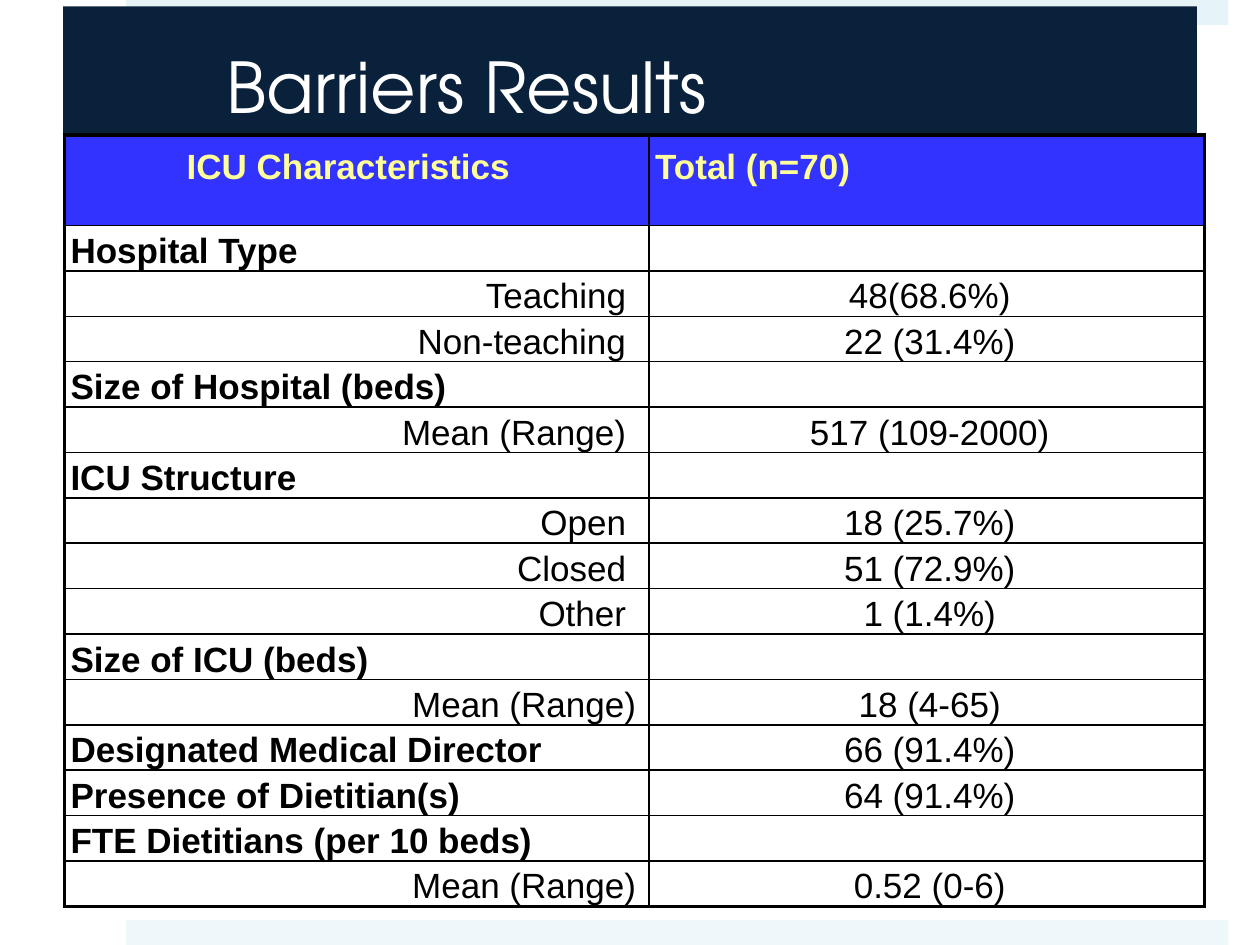
from lxml.etree import SubElement
from pptx import Presentation
from pptx.dml.color import RGBColor
from pptx.enum.shapes import MSO_SHAPE
from pptx.enum.text import MSO_ANCHOR, PP_ALIGN as ALIGN
from pptx.oxml.ns import qn
from pptx.util import Inches, Pt

WHITE = RGBColor(0xFF, 0xFF, 0xFF)
BLACK = RGBColor(0, 0, 0)
NAVY = RGBColor(0x09, 0x21, 0x3B)
BLUE = RGBColor(0x33, 0x33, 0xFF)
YELLOW = RGBColor(0xFF, 0xFF, 0x99)
TOP_BAR = RGBColor(0xE6, 0xF4, 0xF8)
BOTTOM_BAR = RGBColor(0xEE, 0xF8, 0xFB)

HEADER = ("ICU Characteristics", "Total (n=70)")
GROUPS = [
    ("Hospital Type", "", [("Teaching", "48(68.6%)"), ("Non-teaching", "22 (31.4%)")]),
    ("Size of Hospital (beds)", "", [("Mean (Range)", "517 (109-2000)")]),
    ("ICU Structure", "", [("Open", "18 (25.7%)"), ("Closed", "51 (72.9%)"),
                           ("Other", "1 (1.4%)")]),
    ("Size of ICU (beds)", "", [("Mean (Range)", "18 (4-65)")]),
    ("Designated Medical Director", "66 (91.4%)", []),
    ("Presence of Dietitian(s)", "64 (91.4%)", []),
    ("FTE Dietitians (per 10 beds)", "", [("Mean (Range)", "0.52 (0-6)")]),
]
FLUSH_VALUES = ("18 (4-65)", "0.52 (0-6)")


class SlideBuilder:
    """Draws styled elements on the current slide."""

    title_font, table_font = "TeX Gyre Adventor", "Arial"
    title_size, table_size = Pt(40), Pt(20)
    thin, thick = Pt(1), Pt(2.25)

    def __init__(self, prs):
        self.s = prs.slides.add_slide(prs.slide_layouts[5])

    def format(self, p, font, size, color, bold=False, align=ALIGN.LEFT):
        p.alignment = align
        for r in p.runs:
            r.font.name, r.font.size, r.font.bold = font, size, bold
            r.font.color.rgb = color

    def title(self, text, x, y, w, h):
        sp = self.s.shapes.title
        sp.left, sp.top, sp.width, sp.height = map(Inches, (x, y, w, h))
        sp.fill.solid()
        sp.fill.fore_color.rgb = NAVY
        tf = sp.text_frame
        tf.text = text
        tf.vertical_anchor = MSO_ANCHOR.MIDDLE
        tf.margin_left, tf.margin_right = Inches(1.3), Inches(0.3)
        self.format(tf.paragraphs[0], self.title_font, self.title_size, WHITE)

    def bar(self, y, color):
        sp = self.s.shapes.add_shape(MSO_SHAPE.RECTANGLE, Inches(1), Inches(y),
                                     Inches(8.75), Inches(0.2))
        sp.shadow.inherit = False
        sp.fill.solid()
        sp.fill.fore_color.rgb = color
        sp.line.fill.background()
        self.s.shapes.title.element.addprevious(sp.element)

    def table(self, x, y, widths, heights):
        frame = self.s.shapes.add_table(len(heights), len(widths), Inches(x), Inches(y),
                                        Inches(sum(widths)), Inches(sum(heights)))
        table = frame.table
        table.horz_banding = False
        for column, width in zip(table.columns, widths):
            column.width = Inches(width)
        for row, height in zip(table.rows, heights):
            row.height = Inches(height)
        return table

    def cell(self, cell, text, fill, color, bold, align, margins, thick_sides):
        left, top, right = map(Inches, margins)
        cell.margin_left, cell.margin_top = left, top
        cell.margin_right, cell.margin_bottom = right, 0
        cell.text = text
        self.format(cell.text_frame.paragraphs[0], self.table_font, self.table_size,
                    color, bold, align)
        tcPr = cell._tc.get_or_add_tcPr()
        for side in "LRTB":
            width = self.thick if side in thick_sides else self.thin
            ln = SubElement(tcPr, qn(f"a:ln{side}"), w=str(int(width)))
            SubElement(SubElement(ln, qn("a:solidFill")), qn("a:srgbClr"), val=str(BLACK))
        cell.fill.solid()
        cell.fill.fore_color.rgb = fill


def main():
    prs = Presentation()
    prs.slide_width, prs.slide_height = Inches(10), Inches(7.5)
    b = SlideBuilder(prs)
    b.bar(0, TOP_BAR)
    b.bar(7.3, BOTTOM_BAR)
    b.title("Barriers Results", 0.5, 0.05, 9, 1.25)

    rows = []
    for name, value, items in GROUPS:
        rows.append((name, value, True))
        rows += [(label, number, False) for label, number in items]
    table = b.table(0.51, 1.07, [4.64, 4.41], [0.72] + [0.36] * len(rows))

    b.cell(table.cell(0, 0), HEADER[0], BLUE, YELLOW, True, ALIGN.CENTER,
           (0.05, 0.1, 0.18), "LT")
    b.cell(table.cell(0, 1), HEADER[1], BLUE, YELLOW, True, ALIGN.LEFT,
           (0.05, 0.1, 0), "RT")
    for i, (label, value, heading) in enumerate(rows, 1):
        bottom = "B" if i == len(rows) else ""
        align = ALIGN.LEFT if heading else ALIGN.RIGHT
        right = 0.1 if heading or value in FLUSH_VALUES else 0.18
        b.cell(table.cell(i, 0), label, WHITE, BLACK, heading, align,
               (0.05, 0.05, right), "L" + bottom)
        b.cell(table.cell(i, 1), value, WHITE, BLACK, False, ALIGN.CENTER,
               (0.05, 0.05, 0), "R" + bottom)
    prs.save("out.pptx")


if __name__ == "__main__":
    main()
